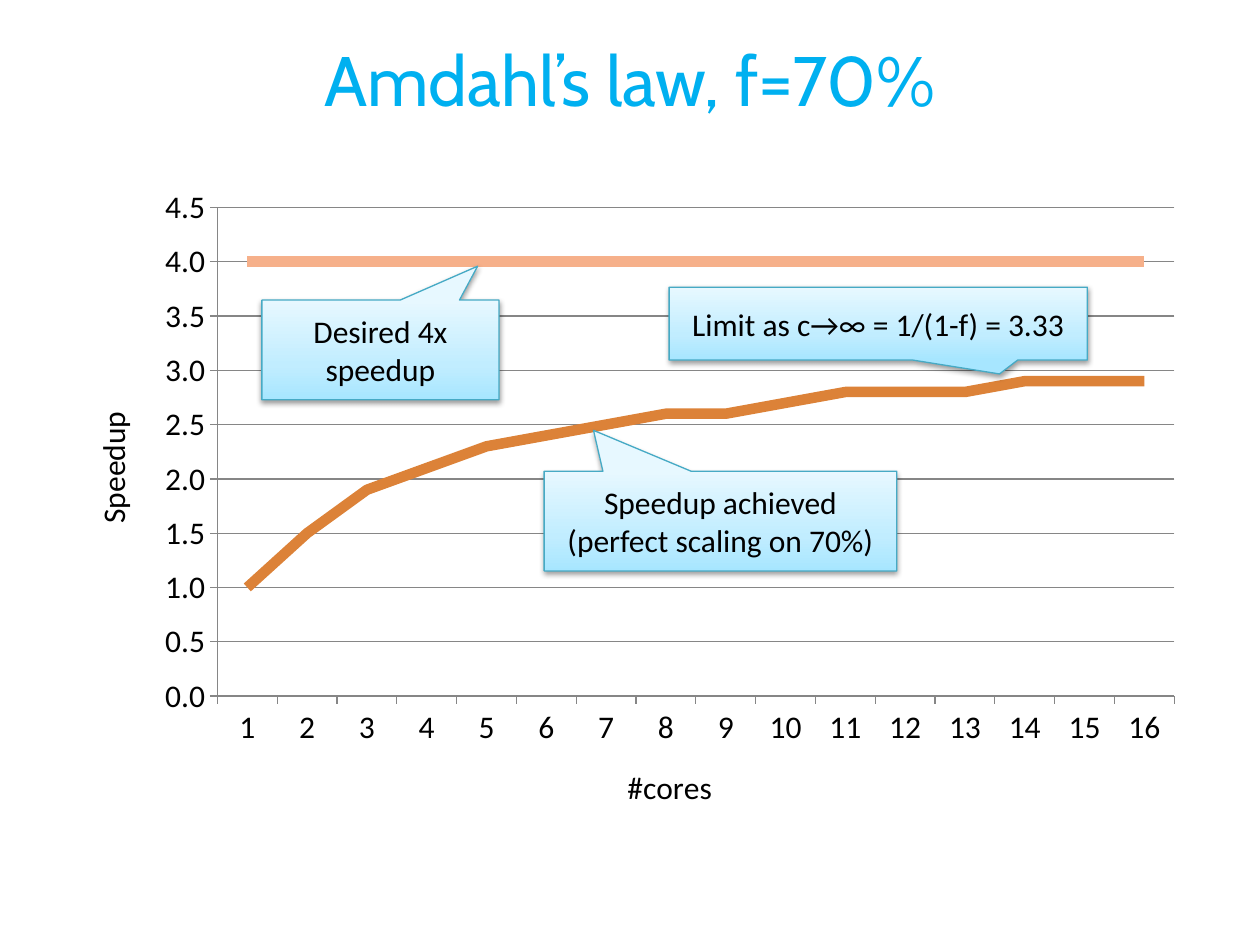
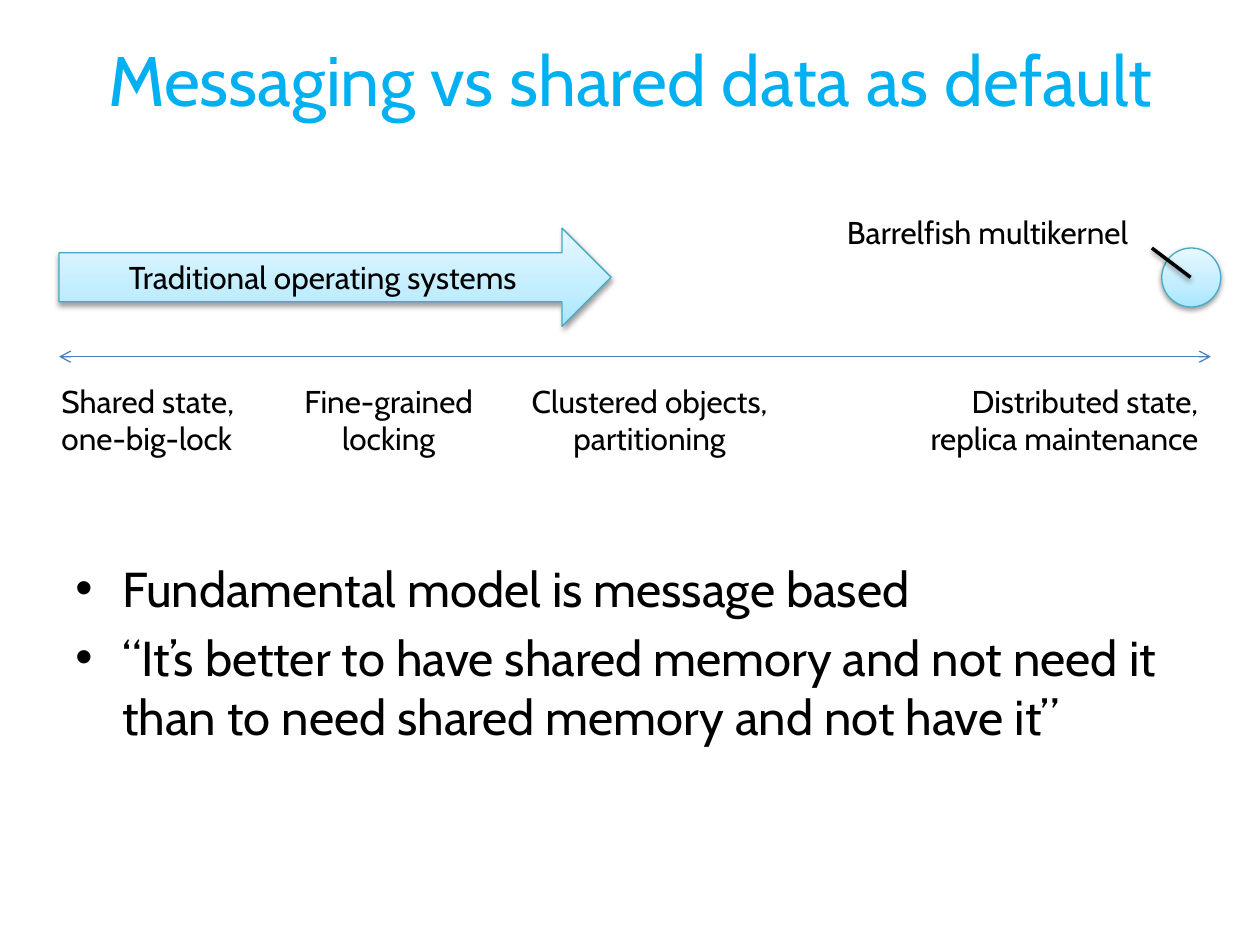
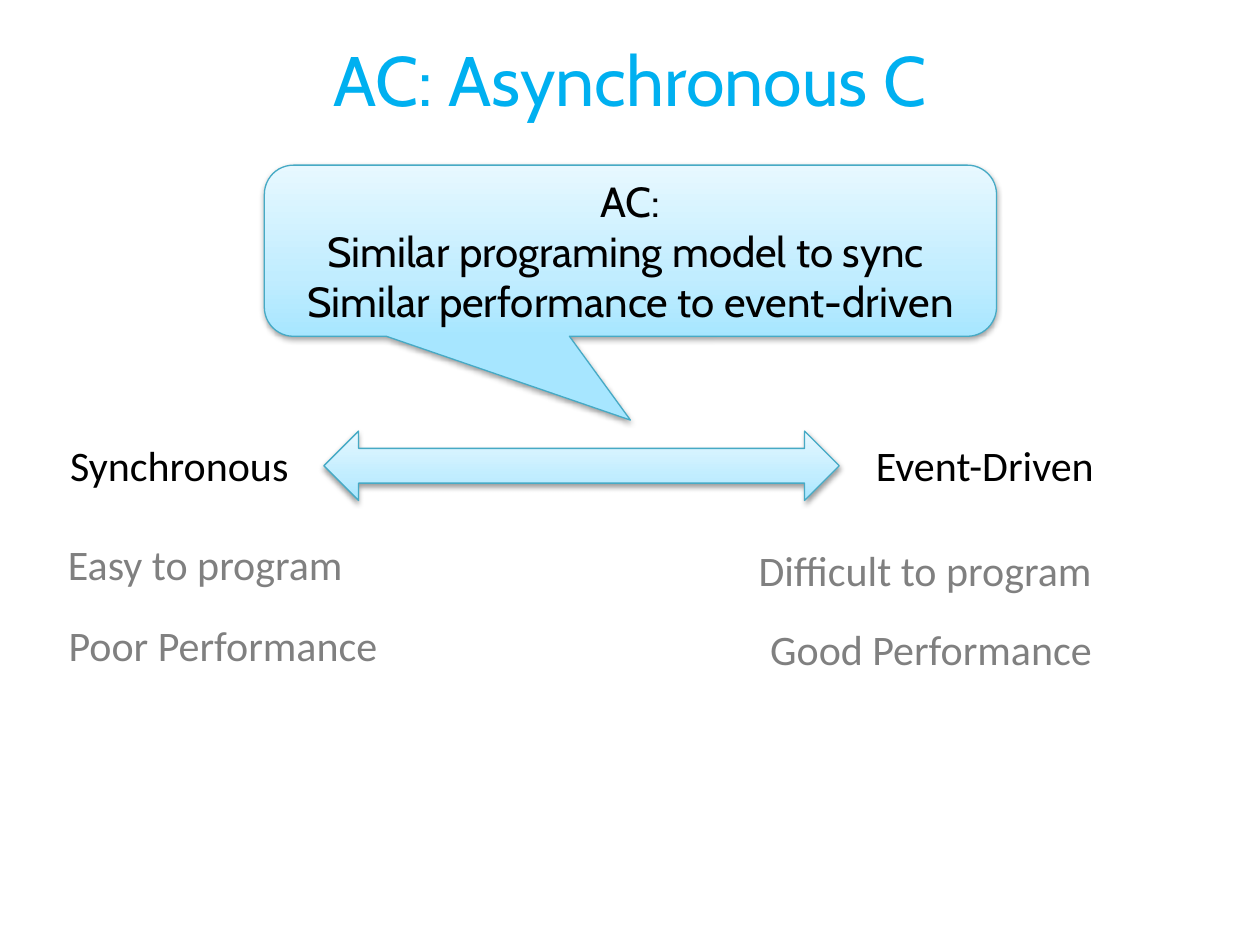
from dataclasses import dataclass
from typing import NamedTuple

from lxml.etree import SubElement
from pptx import Presentation
from pptx.chart.data import CategoryChartData
from pptx.dml.color import RGBColor
from pptx.enum.chart import XL_CHART_TYPE as ChartType, XL_TICK_MARK as Tick
from pptx.enum.shapes import MSO_CONNECTOR as Connector, MSO_SHAPE as Shape
from pptx.enum.text import MSO_ANCHOR as Anchor, MSO_AUTO_SIZE as AutoSize, PP_ALIGN as Align
from pptx.oxml.ns import qn
from pptx.util import Cm, Pt

BLACK = RGBColor(0x00, 0x00, 0x00)
GREY = RGBColor(0x80, 0x80, 0x80)
GRID = RGBColor(0x86, 0x86, 0x86)
TITLE_BLUE = RGBColor(0x00, 0xB0, 0xF0)
AXIS_BLUE = RGBColor(0x4B, 0x7E, 0xBC)
OUTLINE = RGBColor(0x46, 0xAA, 0xC5)
ACHIEVED = RGBColor(0xDC, 0x82, 0x38)
DESIRED = RGBColor(0xF6, 0xB0, 0x8A)
GRADIENT = (
    (0, RGBColor(0xA7, 0xE6, 0xFF)),
    (35, RGBColor(0xC1, 0xED, 0xFF)),
    (100, RGBColor(0xE7, 0xF8, 0xFF)),
)
CABIN = "Cabin"
CALIBRI = "Calibri"


class Box(NamedTuple):
    x: float
    y: float
    w: float
    h: float

    def lengths(self) -> tuple:
        return tuple(Cm(v) for v in self)


@dataclass(frozen=True)
class Label:
    text: str
    box: Box
    align: Align = Align.CENTER
    color: RGBColor = BLACK
    wrap: bool = False


@dataclass(frozen=True)
class GlossyShape:
    kind: Shape
    box: Box
    text: str = ""
    adjust: tuple = ()
    size: int = 18
    font: str = CABIN


def write(tf, text: str, *, size: float, font: str = CABIN, color: RGBColor = BLACK,
          align: Align = Align.LEFT, bullet: bool = False, gap: float = 0) -> None:
    for i, line in enumerate(text.split("\n")):
        p = tf.paragraphs[0] if i == 0 else tf.add_paragraph()
        p.text = line
        p.alignment = align
        if i and gap:
            p.space_before = Pt(gap)
        if bullet:
            pPr = p._p.get_or_add_pPr()
            pPr.set("marL", str(Cm(0.95)))
            pPr.set("indent", str(-Cm(0.95)))
            SubElement(pPr, qn("a:buFont"), typeface="Arial")
            SubElement(pPr, qn("a:buChar"), char="•")
        for r in p.runs:
            r.font.size = Pt(size)
            r.font.name = font
            r.font.bold = False
            r.font.color.rgb = color


def set_effect(s, shadow: bool) -> None:
    spPr = s._element.spPr
    effects = spPr.find(qn("a:effectLst"))
    if effects is None:
        effects = SubElement(spPr, qn("a:effectLst"))
    if shadow:
        outer = SubElement(effects, qn("a:outerShdw"), blurRad=str(Pt(3.1)),
                           dist=str(Pt(1.6)), dir="5400000", rotWithShape="0")
        black = SubElement(outer, qn("a:srgbClr"), val=str(BLACK))
        SubElement(black, qn("a:alpha"), val="38000")


def add_text(slide, box: Box, text: str, *, anchor: Anchor = Anchor.TOP,
             wrap: bool = True, grow: bool = False, **fmt) -> None:
    tf = slide.shapes.add_textbox(*box.lengths()).text_frame
    tf.word_wrap = wrap
    tf.auto_size = AutoSize.SHAPE_TO_FIT_TEXT if grow else AutoSize.NONE
    tf.vertical_anchor = anchor
    write(tf, text, **fmt)


def add_label(slide, label: Label, *, size: int, font: str) -> None:
    add_text(slide, label.box, label.text, wrap=label.wrap, grow=True, size=size,
             font=font, color=label.color, align=label.align)


def add_glossy(slide, item: GlossyShape) -> None:
    s = slide.shapes.add_shape(item.kind, *item.box.lengths())
    for i, value in enumerate(item.adjust):
        s.adjustments[i] = value
    s.fill.gradient()
    s.fill.gradient_angle = 90
    stops = s._element.spPr.find(".//" + qn("a:gsLst"))
    for stop in list(stops):
        stops.remove(stop)
    for position, color in GRADIENT:
        stop = SubElement(stops, qn("a:gs"), pos=str(position * 1000))
        SubElement(stop, qn("a:srgbClr"), val=str(color))
    s.line.color.rgb = OUTLINE
    s.line.width = Pt(0.75)
    s.shadow.inherit = False
    set_effect(s, shadow=True)
    if item.text:
        s.text_frame.word_wrap = True
        s.text_frame.vertical_anchor = Anchor.MIDDLE
        write(s.text_frame, item.text, size=item.size, font=item.font, align=Align.CENTER)


def add_line(slide, start: tuple, end: tuple, *, color: RGBColor, width: float,
             arrows: bool = False, shadow: bool = False) -> None:
    s = slide.shapes.add_connector(Connector.STRAIGHT, *(Cm(v) for v in start + end))
    s.line.color.rgb = color
    s.line.width = Pt(width)
    if arrows:
        for tag in ("a:headEnd", "a:tailEnd"):
            SubElement(s.line._get_or_add_ln(), qn(tag), type="arrow")
    set_effect(s, shadow)


def add_slide(prs, title: str):
    slide = prs.slides.add_slide(prs.slide_layouts[6])
    add_text(slide, Box(0, 0, 25.4, 3.18), title, anchor=Anchor.MIDDLE,
             size=40, color=TITLE_BLUE, align=Align.CENTER)
    return slide


def add_speedup_chart(slide) -> None:
    achieved = (1, 1.5, 1.9, 2.1, 2.3, 2.4, 2.5, 2.6, 2.6, 2.7, 2.8, 2.8, 2.8, 2.9, 2.9, 2.9)
    data = CategoryChartData()
    data.categories = [str(c + 1) for c in range(len(achieved))]
    data.add_series("Series 1", achieved)
    data.add_series("Series 2", [4] * len(achieved))
    box = Box(1.27, 3.53, 22.86, 13.36)
    chart = slide.shapes.add_chart(ChartType.LINE, *box.lengths(), data).chart
    chart.has_legend = False
    chart.has_title = False
    chart.font.size = Pt(18)
    chart.font.name = CALIBRI
    chart.font.color.rgb = BLACK
    chart.plots[0].vary_by_categories = False
    for series, color in zip(chart.plots[0].series, (ACHIEVED, DESIRED)):
        series.smooth = False
        series.format.line.color.rgb = color
        series.format.line.width = Pt(6)
    for axis, title in ((chart.category_axis, "#cores"), (chart.value_axis, "Speedup")):
        write(axis.axis_title.text_frame, title, size=18, font=CALIBRI, align=Align.CENTER)
        axis.major_tick_mark = Tick.OUTSIDE
        axis.minor_tick_mark = Tick.NONE
        axis.format.line.color.rgb = GRID
    axis = chart.value_axis
    axis.minimum_scale, axis.maximum_scale, axis.major_unit = 0, 4.5, 0.5
    axis.tick_labels.number_format = "#,##0.0"
    axis.tick_labels.number_format_is_linked = False
    axis.major_gridlines.format.line.color.rgb = GRID


def build_amdahl(prs) -> None:
    slide = add_slide(prs, "Amdahl’s law, f=70%")
    add_speedup_chart(slide)
    for text, box, adjust in (
        ("Desired 4x speedup", Box(5.28, 6.05, 4.78, 2.01), (0.41, -0.84)),
        ("Speedup achieved (perfect scaling on 70%)", Box(10.97, 9.5, 7.11, 2.01),
         (-0.36, -0.91)),
        ("Limit as c→∞ = 1/(1-f) = 3.33", Box(13.49, 5.79, 8.43, 1.47), (0.29, 0.69)),
    ):
        add_glossy(slide, GlossyShape(Shape.RECTANGULAR_CALLOUT, box, text, adjust,
                                      font=CALIBRI))


def build_messaging(prs) -> None:
    slide = add_slide(prs, "Messaging vs shared data as default")
    add_text(slide, Box(1.27, 11.13, 22.73, 4.42),
             "Fundamental model is message based\n"
             "“It’s better to have shared memory and not need it "
             "than to need shared memory and not have it”",
             size=28, bullet=True, gap=6)
    add_line(slide, (1.19, 7.19), (24.41, 7.19), color=AXIS_BLUE, width=0.75, arrows=True)
    add_glossy(slide, GlossyShape(Shape.RIGHT_ARROW, Box(1.19, 4.6, 11.13, 1.98),
                                  "Traditional operating systems"))
    add_glossy(slide, GlossyShape(Shape.OVAL, Box(23.42, 5, 1.19, 1.19)))
    top, height = 7.57, 1.8
    for label in (
        Label("Shared state,\none-big-lock", Box(0.99, top, 4.17, height), Align.LEFT),
        Label("Fine-grained\nlocking", Box(5.79, top, 4.09, height)),
        Label("Clustered objects,\npartitioning", Box(10.34, top, 5.51, height)),
        Label("Distributed state,\nreplica maintenance", Box(18.24, top, 6.17, height),
              Align.RIGHT),
        Label("Barrelfish multikernel", Box(16.54, 4.17, 6.45, 1.02), Align.RIGHT),
    ):
        add_label(slide, label, size=18, font=CABIN)
    add_line(slide, (23.22, 5), (24, 5.59), color=BLACK, width=2, shadow=True)


def build_async(prs) -> None:
    slide = add_slide(prs, "AC: Asynchronous C")
    add_glossy(slide, GlossyShape(Shape.LEFT_RIGHT_ARROW, Box(6.53, 8.69, 10.39, 1.4)))
    height = 1.27
    for label in (
        Label("Synchronous", Box(1.14, 8.74, 4.95, height)),
        Label("Event-Driven", Box(15.34, 8.74, 6.96, height), Align.RIGHT, wrap=True),
        Label("Easy to program", Box(1.09, 10.74, 6.1, height), color=GREY),
        Label("Poor Performance", Box(1.09, 12.37, 6.81, height), color=GREY),
        Label("Difficult to program", Box(14.99, 10.85, 7.32, height), color=GREY),
        Label("Good Performance", Box(15.24, 12.45, 7.06, height), color=GREY),
    ):
        add_label(slide, label, size=24, font=CALIBRI)
    add_glossy(slide, GlossyShape(
        Shape.ROUNDED_RECTANGULAR_CALLOUT, Box(5.33, 3.33, 14.76, 3.45),
        "AC:\nSimilar programing model to sync \nSimilar performance to event-driven",
        (0, 0.99, 0.17), size=24))


def main() -> None:
    prs = Presentation()
    prs.slide_width, prs.slide_height = Cm(25.4), Cm(19.05)
    for build in (build_amdahl, build_messaging, build_async):
        build(prs)
    prs.save("out.pptx")


if __name__ == "__main__":
    main()
